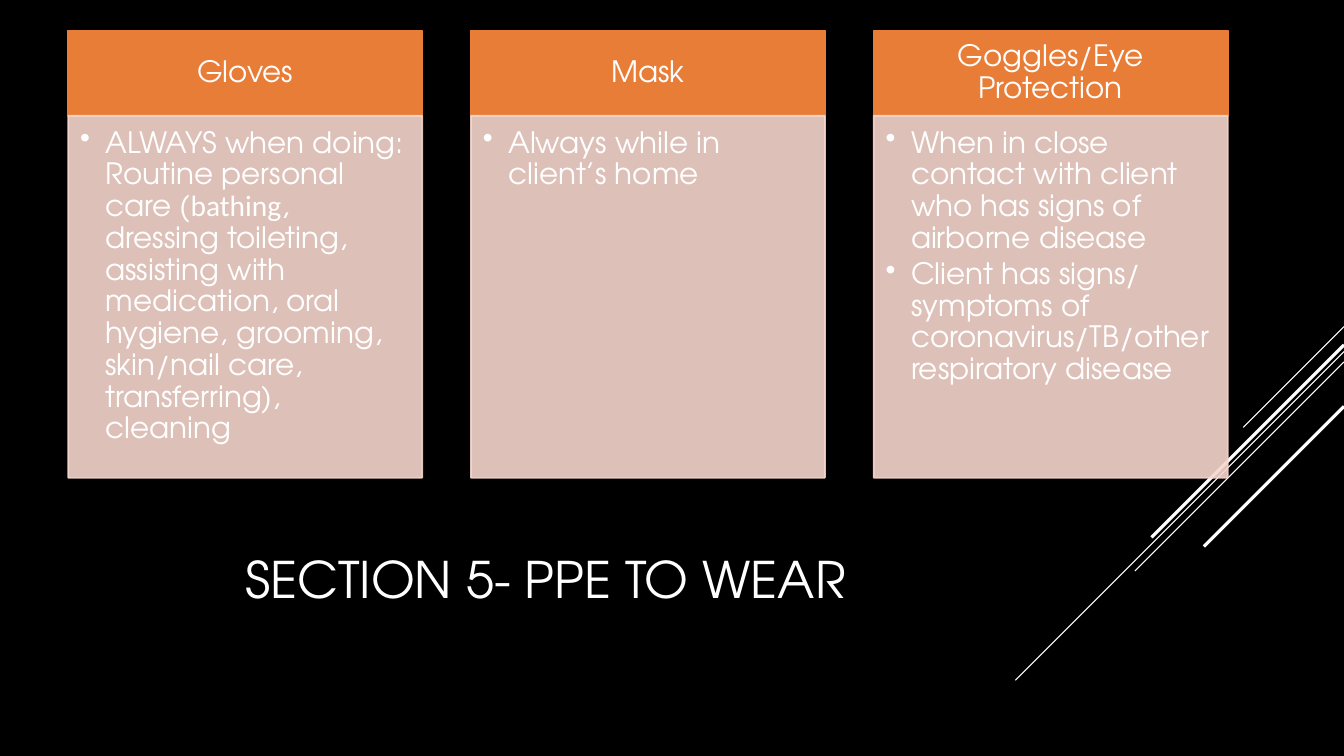
"""Build the slide on protective equipment with three headed cards."""
from dataclasses import dataclass

from pptx import Presentation
from pptx.dml.color import RGBColor as RGB
from pptx.enum.shapes import MSO_CONNECTOR as CONNECTOR, MSO_SHAPE as SHAPE
from pptx.enum.text import MSO_ANCHOR as ANCHOR, PP_ALIGN as ALIGN
from pptx.oxml.ns import qn
from pptx.oxml.xmlchemy import OxmlElement
from pptx.shapes.autoshape import Shape
from pptx.slide import Slide
from pptx.text.text import _Paragraph as Paragraph
from pptx.util import Cm, Pt


@dataclass(frozen=True)
class Theme:
    background: RGB = RGB(0x00, 0x00, 0x00)
    text: RGB = RGB(0xFF, 0xFF, 0xFF)
    header: RGB = RGB(0xE8, 0x7D, 0x37)
    panel: RGB = RGB(0xF6, 0xD7, 0xCE)
    panel_opacity: int = 90
    font: str = "TeX Gyre Adventor"
    alt_font: str = "Calibri"
    title_size: int = 36
    card_size: int = 21
    border: float = 1.25


@dataclass(frozen=True)
class Ray:
    top: float
    reach: float
    weight: float


@dataclass(frozen=True)
class Span:
    text: str
    font: str


@dataclass(frozen=True)
class Card:
    heading: str
    bullets: list[list[Span]]


THEME = Theme()
WIDTH, HEIGHT = 33.87, 19.05
CARD_LEFT, CARD_PITCH, CARD_WIDTH = 1.72, 10.15, 8.92
HEADER_TOP, HEADER_HEIGHT, PANEL_HEIGHT = 0.77, 2.15, 9.12

RAYS = [
    Ray(8.23, 2.54, 0.75),
    Ray(8.86, 8.28, 0.75),
    Ray(9.12, 5.27, 0.75),
    Ray(8.69, 4.85, 2.25),
    Ray(10.24, 3.53, 2.25),
]


def plain(text: str) -> list[Span]:
    """Return a bullet in the main font."""
    return [Span(text, THEME.font)]


CARDS = [
    Card("Gloves", [[
        Span("ALWAYS when doing: Routine personal care (", THEME.font),
        Span("bathing", THEME.alt_font),
        Span(", dressing toileting, assisting with medication, oral hygiene, "
             "grooming, skin/nail care, transferring), cleaning", THEME.font),
    ]]),
    Card("Mask", [plain("Always while in client’s home")]),
    Card("Goggles/Eye Protection", [
        plain("When in close contact with client who has signs of airborne disease"),
        plain("Client has signs/ symptoms of coronavirus/TB/other respiratory disease"),
    ]),
]


def add_run(p: Paragraph, span: Span, size: int) -> None:
    """Append one formatted run."""
    r = p.add_run()
    r.text = span.text
    r.font.name = span.font
    r.font.size = Pt(size)
    r.font.color.rgb = THEME.text


def set_bullet(p: Paragraph) -> None:
    """Give a paragraph a hanging round bullet."""
    pPr = p._p.get_or_add_pPr()
    pPr.set("marL", str(Cm(0.64)))
    pPr.set("indent", str(-Cm(0.64)))
    bullet = OxmlElement("a:buChar")
    bullet.set("char", "•")
    pPr.append(bullet)


def set_opacity(sp: Shape, percent: int) -> None:
    """Make the fill and outline of a shape translucent."""
    for color in sp._element.spPr.iter(qn("a:srgbClr")):
        alpha = OxmlElement("a:alpha")
        alpha.set("val", str(percent * 1000))
        color.append(alpha)


def add_box(s: Slide, left: float, top: float, height: float, color: RGB,
            anchor: ANCHOR, insets: tuple[float, float, float, float]) -> Shape:
    """Add a coloured card rectangle ready for text."""
    sp = s.shapes.add_shape(SHAPE.RECTANGLE, Cm(left), Cm(top), Cm(CARD_WIDTH), Cm(height))
    sp.shadow.inherit = False
    sp.fill.solid()
    sp.fill.fore_color.rgb = color
    sp.line.color.rgb = color
    sp.line.width = Pt(THEME.border)
    tf = sp.text_frame
    tf.word_wrap = True
    tf.vertical_anchor = anchor
    tf.margin_left, tf.margin_top, tf.margin_right, tf.margin_bottom = map(Cm, insets)
    return sp


def add_card(s: Slide, card: Card, left: float) -> None:
    """Add a heading box and the bulleted panel below it."""
    header = add_box(s, left, HEADER_TOP, HEADER_HEIGHT, THEME.header,
                     ANCHOR.MIDDLE, (0.41, 0.23, 0.41, 0.23))
    p = header.text_frame.paragraphs[0]
    p.alignment = ALIGN.CENTER
    p.line_spacing = 0.9
    add_run(p, Span(card.heading, THEME.font), THEME.card_size)

    panel = add_box(s, left, HEADER_TOP + HEADER_HEIGHT, PANEL_HEIGHT, THEME.panel,
                    ANCHOR.TOP, (0.3, 0.3, 0.41, 0.46))
    set_opacity(panel, THEME.panel_opacity)
    tf = panel.text_frame
    for i, spans in enumerate(card.bullets):
        p = tf.add_paragraph() if i else tf.paragraphs[0]
        p.alignment = ALIGN.LEFT
        p.line_spacing = 0.9
        p.space_after = Pt(3)
        set_bullet(p)
        for span in spans:
            add_run(p, span, THEME.card_size)


def add_ray(s: Slide, ray: Ray) -> None:
    """Add a 45-degree line running down from the right edge."""
    line = s.shapes.add_connector(CONNECTOR.STRAIGHT, Cm(WIDTH), Cm(ray.top),
                                  Cm(WIDTH - ray.reach), Cm(ray.top + ray.reach))
    line.line.color.rgb = THEME.text
    line.line.width = Pt(ray.weight)
    line._element.spPr.append(OxmlElement("a:effectLst"))


def add_title(s: Slide, text: str) -> None:
    """Fill and place the title placeholder."""
    title = s.shapes.title
    title.left, title.top, title.width, title.height = Cm(1.9), Cm(12.47), Cm(23.7), Cm(4.19)
    tf = title.text_frame
    tf.word_wrap = True
    tf.vertical_anchor = ANCHOR.MIDDLE
    p = tf.paragraphs[0]
    p.alignment = ALIGN.CENTER
    add_run(p, Span(text, THEME.font), THEME.title_size)


def main() -> None:
    """Build and save the presentation."""
    prs = Presentation()
    prs.slide_width, prs.slide_height = Cm(WIDTH), Cm(HEIGHT)
    s = prs.slides.add_slide(prs.slide_layouts.get_by_name("Title Only"))
    s.background.fill.solid()
    s.background.fill.fore_color.rgb = THEME.background
    for ray in RAYS:
        add_ray(s, ray)
    add_title(s, "SECTION 5- PPE TO WEAR")
    for i, card in enumerate(CARDS):
        add_card(s, card, CARD_LEFT + i * CARD_PITCH)
    prs.save("out.pptx")


if __name__ == "__main__":
    main()
